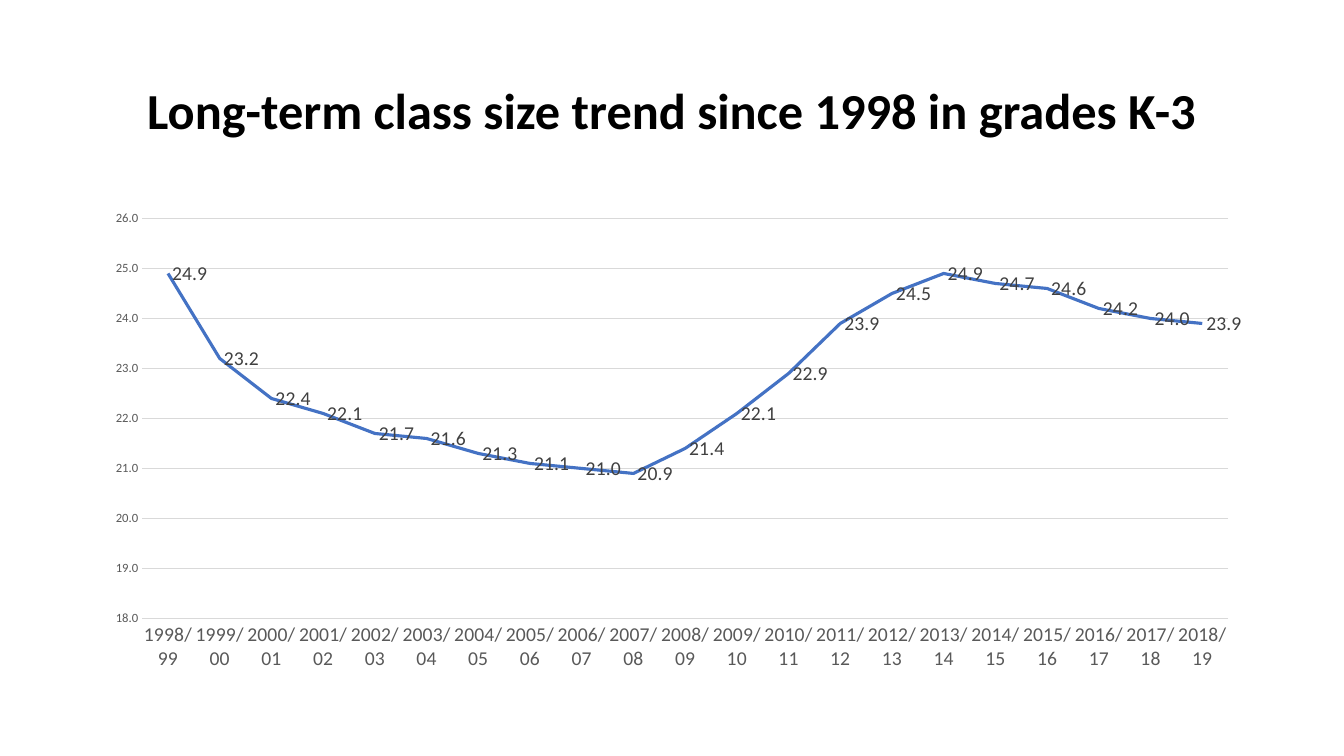
from dataclasses import dataclass

from pptx import Presentation
from pptx.chart.data import CategoryChartData
from pptx.dml.color import RGBColor
from pptx.enum.chart import XL_CHART_TYPE, XL_LABEL_POSITION, XL_MARKER_STYLE, XL_TICK_MARK
from pptx.enum.text import MSO_ANCHOR, MSO_AUTO_SIZE, PP_ALIGN
from pptx.util import Inches, Pt

LINE_CHART = XL_CHART_TYPE.LINE
LABEL_RIGHT = XL_LABEL_POSITION.RIGHT
NO_MARKER = XL_MARKER_STYLE.NONE
NO_TICK = XL_TICK_MARK.NONE
MIDDLE = MSO_ANCHOR.MIDDLE
NO_AUTOFIT = MSO_AUTO_SIZE.NONE
CENTER = PP_ALIGN.CENTER

TITLE_ONLY = 5
COLUMNS = 29
ROWS = 150
FIRST_YEAR = 1998
CLASS_SIZES = [
    24.9, 23.2, 22.4, 22.1, 21.7, 21.6, 21.3,
    21.1, 21.0, 20.9, 21.4, 22.1, 22.9, 23.9,
    24.5, 24.9, 24.7, 24.6, 24.2, 24.0, 23.9,
]


@dataclass(frozen=True)
class Theme:
    font: str = "Calibri"
    title_color: str = "000000"
    axis_color: str = "595959"
    label_color: str = "404040"
    grid_color: str = "D9D9D9"
    trend_color: str = "4472C4"
    title_size: int = 36
    chart_size: int = 10
    label_size: int = 14
    scale_size: int = 9
    grid_width: float = 0.75
    trend_width: float = 2.25


class SlideBuilder:
    def __init__(self, deck, theme):
        self.deck = deck
        self.theme = theme
        self.slide = deck.slides.add_slide(deck.slide_layouts[TITLE_ONLY])

    def place(self, column, row, columns, rows):
        cell_width = self.deck.slide_width / COLUMNS
        cell_height = self.deck.slide_height / ROWS
        return (
            round(column * cell_width),
            round(row * cell_height),
            round(columns * cell_width),
            round(rows * cell_height),
        )

    def style_font(self, font, size, color, bold=False):
        font.name = self.theme.font
        font.size = Pt(size)
        font.bold = bold
        font.color.rgb = RGBColor.from_string(color)

    def style_line(self, line, color, width):
        line.color.rgb = RGBColor.from_string(color)
        line.width = Pt(width)

    def title(self, text, *cells):
        box = self.slide.shapes.title
        box.left, box.top, box.width, box.height = self.place(*cells)
        frame = box.text_frame
        frame.text = text
        frame.word_wrap = True
        frame.auto_size = NO_AUTOFIT
        frame.vertical_anchor = MIDDLE
        para = frame.paragraphs[0]
        para.alignment = CENTER
        para.line_spacing = 0.9
        self.style_font(para.font, self.theme.title_size, self.theme.title_color, bold=True)

    def trend_chart(self, categories, values, *cells):
        theme = self.theme
        data = CategoryChartData(number_format="0.0")
        data.categories = categories
        data.add_series("Series 1", values)
        chart = self.slide.shapes.add_chart(LINE_CHART, *self.place(*cells), data).chart
        chart.has_title = False
        chart.has_legend = False
        self.style_font(chart.font, theme.chart_size, theme.title_color)

        years = chart.category_axis
        years.major_tick_mark = years.minor_tick_mark = NO_TICK
        self.style_font(years.tick_labels.font, theme.label_size, theme.axis_color)
        self.style_line(years.format.line, theme.grid_color, theme.grid_width)

        scale = chart.value_axis
        scale.minimum_scale, scale.maximum_scale, scale.major_unit = 18, 26, 1
        scale.major_tick_mark = scale.minor_tick_mark = NO_TICK
        scale.tick_labels.number_format = "0.0"
        scale.tick_labels.number_format_is_linked = False
        scale.format.line.fill.background()
        self.style_font(scale.tick_labels.font, theme.scale_size, theme.axis_color)
        self.style_line(scale.major_gridlines.format.line, theme.grid_color, theme.grid_width)

        plot = chart.plots[0]
        plot.vary_by_categories = False
        trend = plot.series[0]
        trend.smooth = False
        trend.marker.style = NO_MARKER
        self.style_line(trend.format.line, theme.trend_color, theme.trend_width)
        labels = trend.data_labels
        labels.show_value = True
        labels.position = LABEL_RIGHT
        labels.number_format = "0.0"
        labels.number_format_is_linked = False
        self.style_font(labels.font, theme.label_size, theme.label_color)


def main():
    deck = Presentation()
    deck.slide_width = Inches(13.33)
    deck.slide_height = Inches(7.5)
    page = SlideBuilder(deck, Theme())
    years = range(FIRST_YEAR, FIRST_YEAR + len(CLASS_SIZES))
    school_years = [f"{year}/{(year + 1) % 100:02d}" for year in years]
    page.title("Long-term class size trend since 1998 in grades K-3", 2, 8, 25, 29)
    page.trend_chart(school_years, CLASS_SIZES, 2, 40, 25, 95)
    deck.save("out.pptx")


if __name__ == "__main__":
    main()
